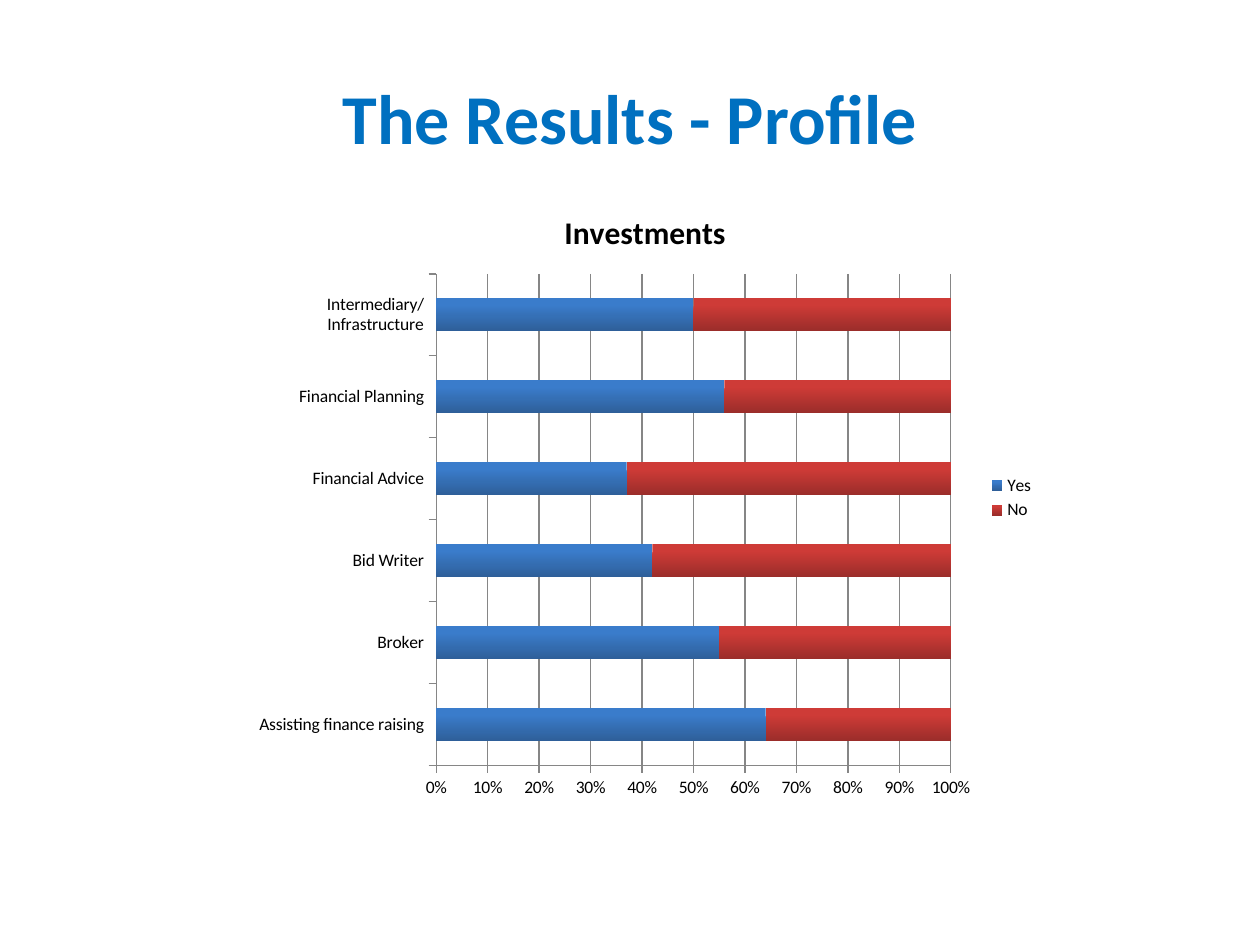
from pptx import Presentation
from pptx.chart.data import CategoryChartData as ChartData
from pptx.dml.color import RGBColor
from pptx.enum.chart import XL_CHART_TYPE as ChartType
from pptx.enum.chart import XL_LEGEND_POSITION as LegendPosition
from pptx.enum.chart import XL_TICK_MARK as TickMark
from pptx.enum.text import MSO_ANCHOR as Anchor
from pptx.enum.text import PP_ALIGN as Align
from pptx.util import Inches, Pt

FONT = "Calibri"
COLORS = {
    "title": "0070C0",
    "text": "000000",
    "line": "868686",
    "yes_top": "3A7CCB",
    "yes_bottom": "2E5F99",
    "no_top": "CE3B37",
    "no_bottom": "9B2D2A",
}
ROLES = ["Assisting finance raising", "Broker", "Bid Writer",
         "Financial Advice", "Financial Planning",
         "Intermediary/Infrastructure"]
ANSWERS = {
    "Yes": [64, 55, 42, 37, 56, 50],
    "No": [36, 45, 58, 63, 44, 50],
}


def color(name):
    return RGBColor.from_string(COLORS[name])


def format_font(font, size, shade="text", bold=False):
    font.name = FONT
    font.size = Pt(size)
    font.bold = bold
    font.color.rgb = color(shade)


def write_text(frame, text, align=Align.CENTER, **font_format):
    paragraph = frame.paragraphs[0]
    paragraph.alignment = align
    run = paragraph.add_run()
    run.text = text
    format_font(run.font, **font_format)


def add_title(slide, text):
    title = slide.shapes.title
    title.left, title.top = Inches(0.5), Inches(0.3)
    title.width, title.height = Inches(9), Inches(1.25)
    title.text_frame.vertical_anchor = Anchor.MIDDLE
    write_text(title.text_frame, text, size=40, shade="title", bold=True)


def style_line(line):
    line.color.rgb = color("line")
    line.width = Pt(0.75)


def style_axis(axis):
    axis.major_tick_mark = TickMark.OUTSIDE
    axis.minor_tick_mark = TickMark.NONE
    style_line(axis.format.line)


def shade_bars(series, top, bottom):
    fill = series.format.fill
    fill.gradient()
    fill.gradient_angle = 270  # runs from top to bottom
    for stop, shade, position in zip(fill.gradient_stops, (top, bottom), (0.2, 1)):
        stop.color.rgb = color(shade)
        stop.position = position


def add_answer_chart(slide, heading):
    data = ChartData(number_format="0")
    data.categories = ROLES
    for answer, values in ANSWERS.items():
        data.add_series(answer, values)
    chart = slide.shapes.add_chart(
        ChartType.BAR_STACKED_100, Inches(1.93), Inches(1.47),
        Inches(6.38), Inches(4.96), data).chart
    format_font(chart.font, size=10)

    # Heading and legend
    chart.has_title = True
    write_text(chart.chart_title.text_frame, heading, size=18, bold=True)
    chart.chart_title.include_in_layout = False
    chart.has_legend = True
    chart.legend.position = LegendPosition.RIGHT
    chart.legend.include_in_layout = False

    # Axes
    style_axis(chart.category_axis)
    percent = chart.value_axis
    style_axis(percent)
    percent.minimum_scale, percent.maximum_scale = 0, 1
    percent.major_unit = 0.1
    percent.tick_labels.number_format = "0%"
    percent.tick_labels.number_format_is_linked = False
    percent.has_major_gridlines = True
    style_line(percent.major_gridlines.format.line)

    # Bars
    plot = chart.plots[0]
    plot.gap_width, plot.overlap = 150, 100
    plot.vary_by_categories = False
    for series in plot.series:
        answer = series.name.lower()
        shade_bars(series, f"{answer}_top", f"{answer}_bottom")


def main():
    deck = Presentation()
    deck.slide_width, deck.slide_height = Inches(10), Inches(7.5)
    slide = deck.slides.add_slide(deck.slide_layouts[5])
    add_title(slide, "The Results - Profile")
    add_answer_chart(slide, "Investments")
    deck.save("out.pptx")


if __name__ == "__main__":
    main()
